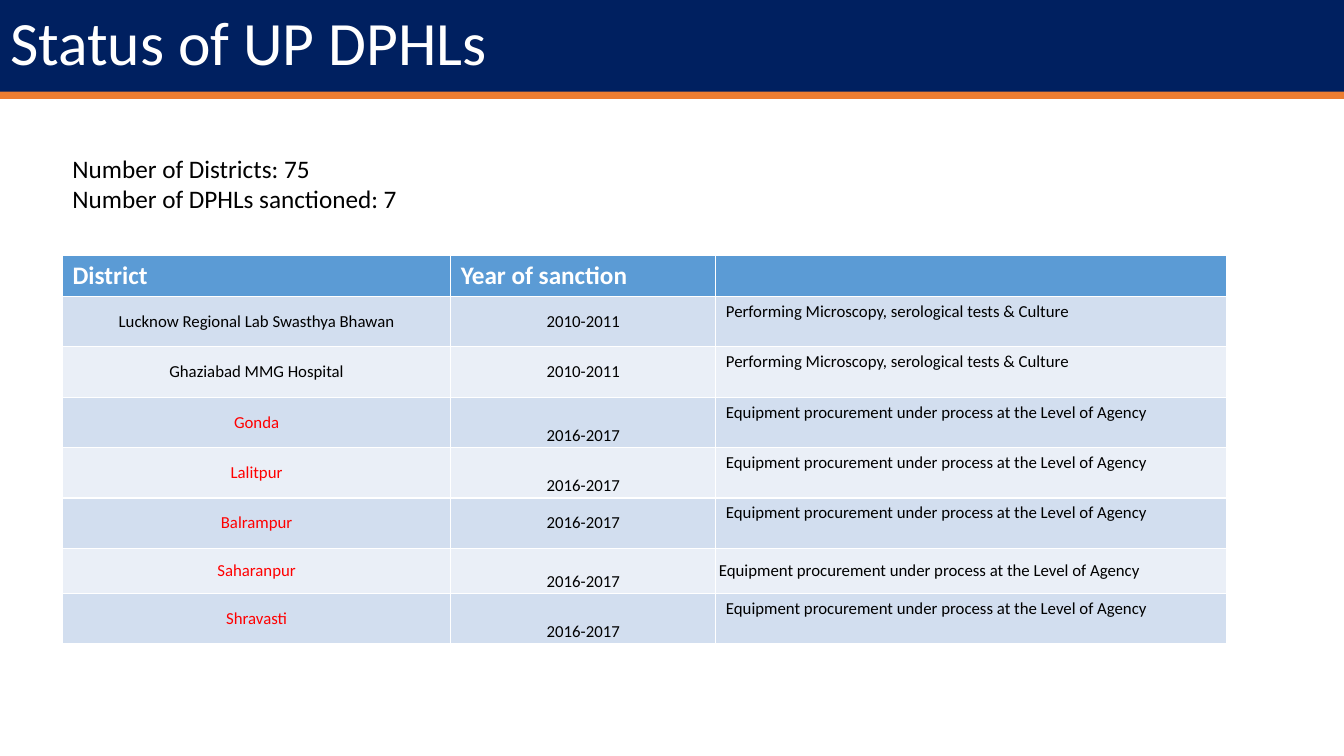
from pptx import Presentation
from pptx.dml.color import RGBColor
from pptx.enum.shapes import MSO_SHAPE
from pptx.enum.text import MSO_ANCHOR, MSO_AUTO_SIZE, PP_ALIGN
from pptx.util import Inches, Pt

RECTANGLE = MSO_SHAPE.RECTANGLE
TOP, MIDDLE, BOTTOM = MSO_ANCHOR.TOP, MSO_ANCHOR.MIDDLE, MSO_ANCHOR.BOTTOM
LEFT, CENTER = PP_ALIGN.LEFT, PP_ALIGN.CENTER
FIXED_SIZE = MSO_AUTO_SIZE.NONE
TITLE_ONLY = 5

COLORS = {
    "navy": "002060", "orange": "ED7D31", "white": "FFFFFF", "black": "000000",
    "red": "FF0000", "header": "5B9BD5", "odd": "D2DEEF", "even": "EAEFF7",
}
HEADINGS = ["District", "Year of sanction", ""]
TESTING = "Performing Microscopy, serological tests & Culture"
PROCURING = "Equipment procurement under process at the Level of Agency"
# District, its colour, year, anchor of the year, status, anchor of the status
DISTRICTS = [
    ("Lucknow Regional Lab Swasthya Bhawan", "black", "2010-2011", MIDDLE, TESTING, TOP),
    ("Ghaziabad MMG Hospital", "black", "2010-2011", MIDDLE, TESTING, TOP),
    ("Gonda", "red", "2016-2017", BOTTOM, PROCURING, TOP),
    ("Lalitpur", "red", "2016-2017", BOTTOM, PROCURING, TOP),
    ("Balrampur", "red", "2016-2017", MIDDLE, PROCURING, TOP),
    ("Saharanpur", "red", "2016-2017", BOTTOM, PROCURING, MIDDLE),
    ("Shravasti", "red", "2016-2017", BOTTOM, PROCURING, TOP),
]
COLUMN_WIDTHS = [3.85, 2.63, 5.07]
ROW_HEIGHTS = [0.41, 0.5, 0.5, 0.5, 0.5, 0.5, 0.45, 0.5]


def color(name):
    return RGBColor.from_string(COLORS[name])


class SlideBuilder:
    def __init__(self, slide, font_name="Calibri"):
        self.slide = slide
        self.font_name = font_name

    def style(self, paragraph, size, color_name, bold=False, alignment=LEFT):
        font = paragraph.font
        font.name, font.size, font.bold = self.font_name, Pt(size), bold
        font.color.rgb = color(color_name)
        paragraph.alignment = alignment

    def band(self, left, top, width, height, color_name):
        shape = self.slide.shapes.add_shape(
            RECTANGLE, *map(Inches, (left, top, width, height)))
        shape.shadow.inherit = False
        shape.fill.solid()
        shape.fill.fore_color.rgb = color(color_name)
        shape.line.color.rgb = color(color_name)
        shape.line.width = Pt(1)
        # Bands lie behind the placeholders
        self.slide.shapes._spTree.insert(2, shape._element)

    def title(self, text, width, height):
        title = self.slide.shapes.title
        title.left, title.top = Inches(0), Inches(0)
        title.width, title.height = Inches(width), Inches(height)
        title.fill.solid()
        title.fill.fore_color.rgb = color("navy")
        frame = title.text_frame
        frame.text = text
        frame.auto_size = FIXED_SIZE
        frame.vertical_anchor = MIDDLE
        frame.paragraphs[0].line_spacing = 0.9
        self.style(frame.paragraphs[0], 44, "white")

    def text(self, left, top, width, height, lines):
        box = self.slide.shapes.add_textbox(*map(Inches, (left, top, width, height)))
        frame = box.text_frame
        frame.word_wrap = True
        frame.text = "\n".join(lines)
        for paragraph in frame.paragraphs:
            self.style(paragraph, 18, "black")

    def cell(self, cell, text, fill, size=12, color_name="black", bold=False,
             alignment=LEFT, anchor=TOP, tight=False):
        cell.text = text
        cell.fill.solid()
        cell.fill.fore_color.rgb = color(fill)
        cell.vertical_anchor = anchor
        if tight:
            cell.margin_left = cell.margin_right = Inches(0.03)
            cell.margin_top = cell.margin_bottom = Inches(0.02)
        self.style(cell.text_frame.paragraphs[0], size, color_name, bold, alignment)

    def district_table(self, left, top):
        table = self.slide.shapes.add_table(
            len(ROW_HEIGHTS), len(COLUMN_WIDTHS), Inches(left), Inches(top),
            Inches(sum(COLUMN_WIDTHS)), Inches(sum(ROW_HEIGHTS))).table
        for column, width in zip(table.columns, COLUMN_WIDTHS):
            column.width = Inches(width)
        for row, height in zip(table.rows, ROW_HEIGHTS):
            row.height = Inches(height)
        for index, heading in enumerate(HEADINGS):
            self.cell(table.cell(0, index), heading, "header", 18, "white", bold=True)
        for index, record in enumerate(DISTRICTS, start=1):
            district, district_color, year, year_anchor, status, status_anchor = record
            fill = "odd" if index % 2 else "even"
            self.cell(table.cell(index, 0), district, fill, color_name=district_color,
                      alignment=CENTER, anchor=MIDDLE, tight=True)
            self.cell(table.cell(index, 1), year, fill, alignment=CENTER,
                      anchor=year_anchor, tight=True)
            self.cell(table.cell(index, 2), status, fill, anchor=status_anchor,
                      tight=status_anchor == MIDDLE)


def main():
    presentation = Presentation()
    presentation.slide_width, presentation.slide_height = Inches(13.33), Inches(7.5)
    slide = presentation.slides.add_slide(presentation.slide_layouts[TITLE_ONLY])
    builder = SlideBuilder(slide)
    builder.band(0, 0.91, 13.33, 0.07, "orange")
    builder.title("Status of UP DPHLs", 13.33, 0.91)
    builder.district_table(0.62, 2.53)
    builder.text(0.62, 1.47, 6.75, 0.71,
                 ["Number of Districts: 75", "Number of DPHLs sanctioned: 7"])
    presentation.save("out.pptx")


if __name__ == "__main__":
    main()
